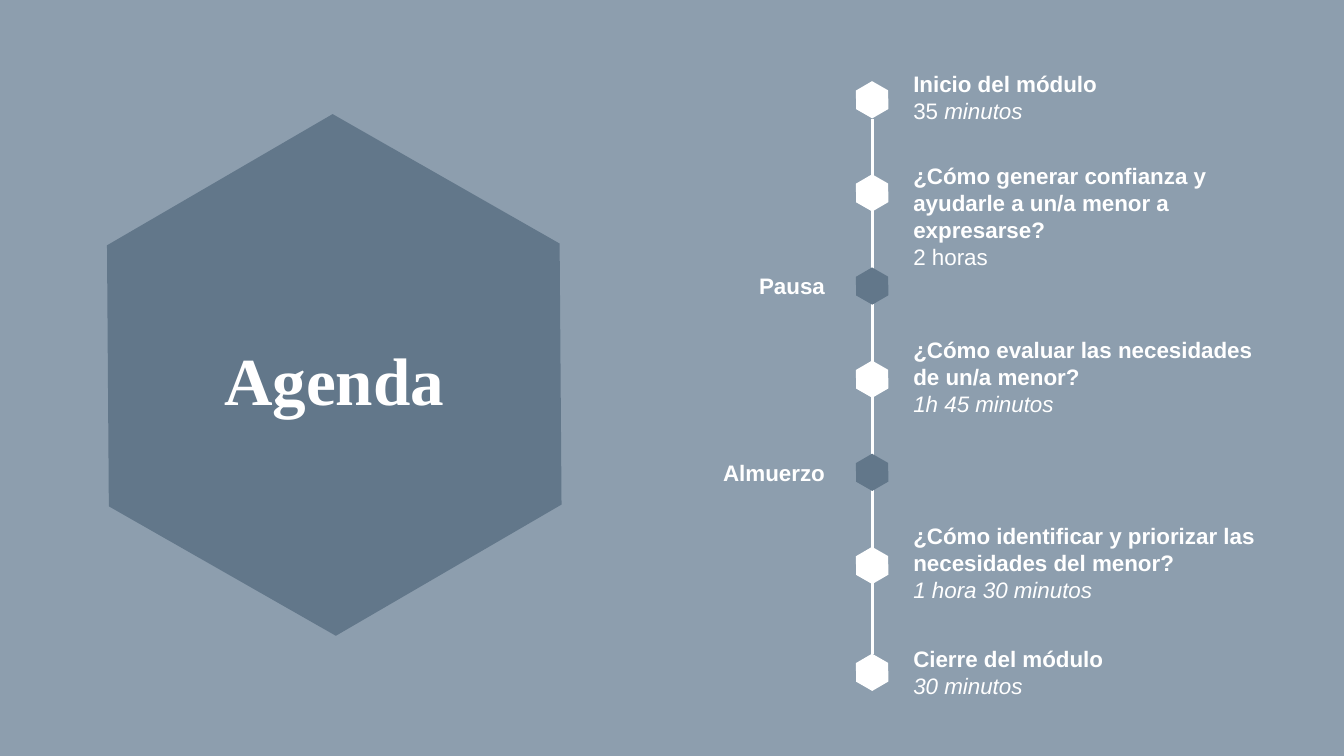
from lxml import etree
from pptx import Presentation
from pptx.dml.color import RGBColor
from pptx.enum.shapes import MSO_CONNECTOR, MSO_SHAPE
from pptx.enum.text import MSO_ANCHOR, MSO_AUTO_SIZE, PP_ALIGN
from pptx.oxml.ns import qn
from pptx.util import Inches, Pt

BACKGROUND, SLATE, WHITE = "8D9EAE", "62778A", "FFFFFF"
TITLE = "Agenda"

# heading, duration as (text, italic) runs, text centre, box height, box width
SESSIONS = [
    ("Inicio del módulo", [("35 ", False), ("minutos", True)], 0.97, 0.64, 2.13),
    ("¿Cómo generar confianza y ayudarle a un/a menor a expresarse?",
     [("2 horas", False)], 2.15, 1.18, 3.59),
    ("¿Cómo evaluar las necesidades de un/a menor?",
     [("1h 45 minutos", True)], 3.74, 0.91, 3.59),
    ("¿Cómo identificar y priorizar las necesidades del menor?",
     [("1 hora 30 minutos", True)], 5.59, 0.91, 3.59),
    ("Cierre del módulo", [("30 minutos", True)], 6.67, 0.64, 3.53),
]
BREAKS = {2: "Pausa", 4: "Almuerzo"}  # timeline step: label

AXIS_X, FIRST_Y, STEP, LAST_Y = 8.65, 0.99, 0.924, 6.67
MARKER_Y = [FIRST_Y + STEP * step for step in range(6)] + [LAST_Y]
MARKER_SIZE = (0.37, 0.32)
SESSION_X = 8.96
BREAK_X, BREAK_WIDTH, BREAK_HEIGHT = 6.8, 1.48, 0.37


def color(hex_string):
    return RGBColor.from_string(hex_string)


def add_hexagon(slide, center_x, center_y, size, fill):
    width, height = size
    hexagon = slide.shapes.add_shape(
        MSO_SHAPE.HEXAGON, Inches(center_x - width / 2), Inches(center_y - height / 2),
        Inches(width), Inches(height))
    hexagon.adjustments[0] = 0.29
    hexagon.rotation = 29.7
    hexagon.shadow.inherit = False
    hexagon.fill.solid()
    hexagon.fill.fore_color.rgb = color(fill)
    hexagon.line.fill.background()


def add_run(paragraph, text, size=16, font="Arial", bold=False, italic=False):
    run = paragraph.add_run()
    run.text = text
    run.font.size, run.font.name = Pt(size), font
    run.font.bold, run.font.italic = bold, italic
    run.font.color.rgb = color(WHITE)


def add_label(slide, left, center_y, width, height, heading, details=(), align=PP_ALIGN.LEFT):
    """Bold heading, with an optional second paragraph of (text, italic) runs."""
    box = slide.shapes.add_textbox(
        Inches(left), Inches(center_y - height / 2), Inches(width), Inches(height))
    frame = box.text_frame
    frame.word_wrap = True
    frame.auto_size = MSO_AUTO_SIZE.SHAPE_TO_FIT_TEXT
    frame.paragraphs[0].alignment = align
    add_run(frame.paragraphs[0], heading, bold=True)
    if details:
        paragraph = frame.add_paragraph()
        paragraph.alignment = align
        for text, italic in details:
            add_run(paragraph, text, italic=italic)


def add_axis(slide):
    axis = slide.shapes.add_connector(
        MSO_CONNECTOR.STRAIGHT, Inches(AXIS_X), Inches(1.18), Inches(AXIS_X), Inches(6.49))
    axis.line.color.rgb = color(WHITE)
    axis.line.width = Pt(2.25)
    etree.SubElement(axis._element.spPr, qn("a:effectLst"))


def format_title(slide):
    title = slide.shapes.title
    title.left, title.top = Inches(1.12), Inches(3.5)
    title.width, title.height = Inches(4.39), Inches(0.61)
    frame = title.text_frame
    frame.word_wrap = True
    frame.auto_size = MSO_AUTO_SIZE.NONE
    frame.vertical_anchor = MSO_ANCHOR.MIDDLE
    paragraph = frame.paragraphs[0]
    paragraph.alignment = PP_ALIGN.CENTER
    paragraph.line_spacing = 0.9
    add_run(paragraph, TITLE, size=48, font="Times New Roman", bold=True)
    title._element.getparent().append(title._element)  # bring to front


def main():
    presentation = Presentation()
    presentation.slide_width, presentation.slide_height = Inches(13.33), Inches(7.5)
    slide = presentation.slides.add_slide(presentation.slide_layouts[5])
    slide.background.fill.solid()
    slide.background.fill.fore_color.rgb = color(BACKGROUND)

    add_hexagon(slide, 3.315, 3.72, (5.19, 4.48), SLATE)
    add_axis(slide)
    for heading, details, center_y, height, width in SESSIONS:
        add_label(slide, SESSION_X, center_y, width, height, heading, details)
    for step, label in BREAKS.items():
        add_label(slide, BREAK_X, MARKER_Y[step], BREAK_WIDTH, BREAK_HEIGHT, label,
                  align=PP_ALIGN.RIGHT)
    for step, center_y in enumerate(MARKER_Y):
        add_hexagon(slide, AXIS_X, center_y, MARKER_SIZE, SLATE if step in BREAKS else WHITE)
    format_title(slide)
    presentation.save("out.pptx")


if __name__ == "__main__":
    main()
